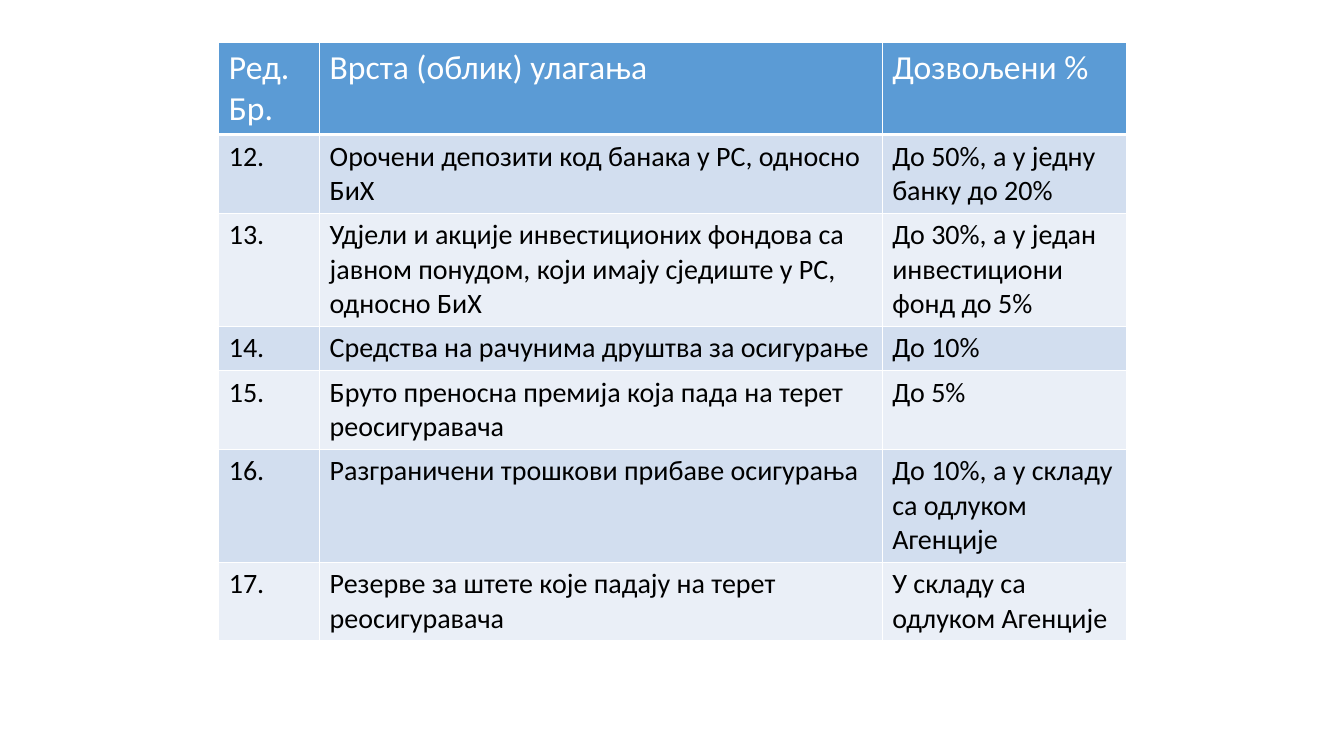
"""Build a slide with a table of permitted investment shares."""
from dataclasses import dataclass

from lxml import etree
from pptx import Presentation
from pptx.dml.color import RGBColor
from pptx.oxml.ns import qn
from pptx.util import Inches, Pt

COLORS = {
    "head": "5B9BD5",
    "odd": "D2DEEF",
    "even": "EAEFF7",
    "white": "FFFFFF",
    "black": "000000",
}
FONT = "Calibri"
WIDTHS = (1, 5.58, 2.42)
HEIGHT = 0.41


@dataclass(frozen=True)
class Entry:
    number: str
    kind: str
    limit: str


@dataclass(frozen=True)
class Style:
    fill: str
    ink: str
    size: int
    base: int


HEAD = Style("head", "white", 24, 3)
ODD = Style("odd", "black", 20, 1)
EVEN = Style("even", "black", 20, 1)

ENTRIES = (
    Entry("Ред. Бр.", "Врста (облик) улагања", "Дозвољени %"),
    Entry("12.", "Орочени депозити код банака у РС, односно БиХ",
          "До 50%, а у једну банку до 20%"),
    Entry("13.", "Удјели и акције инвестиционих фондова са јавном понудом, "
          "који имају сједиште у РС, односно БиХ",
          "До 30%, а у један инвестициони фонд до 5%"),
    Entry("14.", "Средства на рачунима друштва за осигурање", "До 10%"),
    Entry("15.", "Бруто преносна премија која пада на терет реосигуравача",
          "До 5%"),
    Entry("16.", "Разграничени трошкови прибаве осигурања",
          "До 10%, а у складу са одлуком Агенције"),
    Entry("17.", "Резерве за штете које падају на терет реосигуравача",
          "У складу са одлуком Агенције"),
)


def paint(name: str) -> RGBColor:
    return RGBColor.from_string(COLORS[name])


def edge(cell, side: str, width: int) -> None:
    props = cell._tc.get_or_add_tcPr()
    line = etree.SubElement(props, qn(f"a:ln{side}"), w=str(Pt(width)))
    fill = etree.SubElement(line, qn("a:solidFill"))
    etree.SubElement(fill, qn("a:srgbClr"), val=COLORS["white"])


def write(cell, text: str, style: Style) -> None:
    for side in "LRT":
        edge(cell, side, 1)
    edge(cell, "B", style.base)
    cell.fill.solid()
    cell.fill.fore_color.rgb = paint(style.fill)
    run = cell.text_frame.paragraphs[0].add_run()
    run.text = text
    run.font.name = FONT
    run.font.size = Pt(style.size)
    run.font.bold = False
    run.font.color.rgb = paint(style.ink)


def main() -> None:
    deck = Presentation()
    deck.slide_width, deck.slide_height = Inches(13.33), Inches(7.5)
    slide = deck.slides.add_slide(deck.slide_layouts[6])
    frame = slide.shapes.add_table(
        len(ENTRIES), len(WIDTHS), Inches(2.17), Inches(0.42),
        Inches(sum(WIDTHS)), Inches(HEIGHT * len(ENTRIES)))
    table = frame.table
    for column, width in zip(table.columns, WIDTHS):
        column.width = Inches(width)
    for index, (row, entry) in enumerate(zip(table.rows, ENTRIES)):
        row.height = Inches(HEIGHT)
        style = HEAD if index == 0 else ODD if index % 2 else EVEN
        texts = (entry.number, entry.kind, entry.limit)
        for cell, text in zip(row.cells, texts):
            write(cell, text, style)
    frame.height = Inches(5.83)
    deck.save("out.pptx")


if __name__ == "__main__":
    main()
